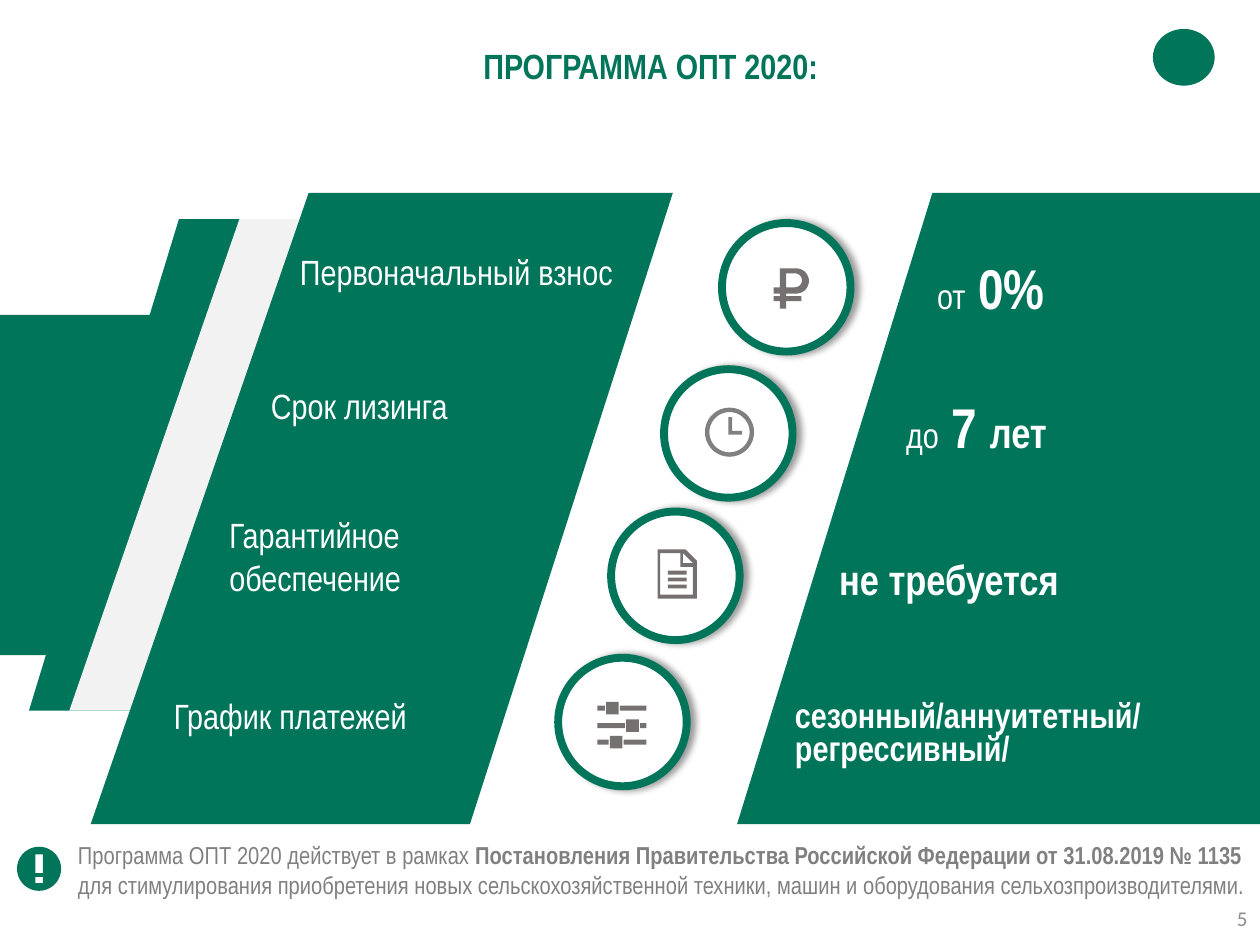
import math

import pptx
import pptx.dml.color
import pptx.enum.shapes
import pptx.enum.text
import pptx.oxml
import pptx.oxml.ns
import pptx.util

Inches = pptx.util.Inches
Pt = pptx.util.Pt
RGBColor = pptx.dml.color.RGBColor
OVAL = pptx.enum.shapes.MSO_SHAPE.OVAL
ALIGN = pptx.enum.text.PP_ALIGN
ANCHOR = pptx.enum.text.MSO_ANCHOR

GREEN = RGBColor(0x00, 0x75, 0x5A)
WHITE = RGBColor(0xFF, 0xFF, 0xFF)
PALE = RGBColor(0xF2, 0xF2, 0xF2)
GREY = RGBColor(0x80, 0x80, 0x80)
ICON_GREY = RGBColor(0x76, 0x71, 0x71)
NUMBER_GREY = RGBColor(0x8C, 0x8C, 0x8C)
FONT = "Arial Narrow"

deck = pptx.Presentation()
deck.slide_width = Inches(10)
deck.slide_height = Inches(7.5)
page = deck.slides.add_slide(deck.slide_layouts[5])


def arc(x, y, radius, start=0, stop=360):
    """Points along an arc, in degrees clockwise from the right."""
    angles = [math.radians(angle) for angle in range(start, stop + 1, 10)]
    return [(x + radius * math.cos(a), y + radius * math.sin(a)) for a in angles]


def draw_outline(contours, color):
    """One filled freeform; inner contours become holes."""
    builder = None
    for contour in contours:
        points = [(Inches(x), Inches(y)) for x, y in contour]
        if builder is None:
            builder = page.shapes.build_freeform(*points[0])
        else:
            builder.move_to(*points[0])
        builder.add_line_segments(points[1:], close=True)
    shape = builder.convert_to_shape()
    shape.shadow.inherit = False
    shape.fill.solid()
    shape.fill.fore_color.rgb = color
    shape.line.fill.background()


# Title
title = page.shapes.title
title.left, title.top = Inches(2.25), Inches(0.3)
title.width, title.height = Inches(5.83), Inches(0.44)
title.text_frame.text = "ПРОГРАММА ОПТ 2020:"
title.text_frame.vertical_anchor = ANCHOR.TOP
title.text_frame.word_wrap = True
para = title.text_frame.paragraphs[0]
para.alignment = ALIGN.CENTER
span = para.runs[0]
span.font.name, span.font.size, span.font.bold = FONT, Pt(20), True
span.font.color.rgb = GREEN

# Plain emblem in the corner
emblem = page.shapes.add_shape(OVAL, Inches(9.15), Inches(0.23), Inches(0.49), Inches(0.45))
emblem.shadow.inherit = False
emblem.fill.solid()
emblem.fill.fore_color.rgb = GREEN
emblem.line.fill.background()

# Slanted bands: top edge, its left and right, bottom edge, its left and right
bands = [
    (2.5, 0, 1.82, 5.2, 0, 0.99, GREEN),
    (1.74, 1.42, 3.41, 5.64, 0.23, 2.3, GREEN),
    (1.74, 1.9, 4.16, 5.64, 0.55, 2.9, PALE),
    (1.53, 2.45, 5.34, 6.54, 0.72, 3.73, GREEN),
    (1.53, 7.4, 10, 6.54, 5.85, 10, GREEN),
]
for top, top_left, top_right, bottom, bottom_left, bottom_right, color in bands:
    draw_outline([[(top_left, top), (top_right, top),
                   (bottom_right, bottom), (bottom_left, bottom)]], color)

# Ringed circles with a soft shadow to the right
for left, top in [(5.73, 1.77), (5.27, 2.93), (4.85, 4.06), (4.43, 5.22)]:
    circle = page.shapes.add_shape(OVAL, Inches(left), Inches(top), Inches(1.02), Inches(1.02))
    circle.fill.solid()
    circle.fill.fore_color.rgb = WHITE
    circle.line.color.rgb = GREEN
    circle.line.width = Pt(4.5)
    circle.shadow.inherit = False
    effects = circle._element.spPr.find(pptx.oxml.ns.qn("a:effectLst"))
    effects.append(pptx.oxml.parse_xml(
        f'<a:outerShdw {pptx.oxml.ns.nsdecls("a")} blurRad="{Pt(4)}" dist="{Pt(3)}" dir="0">'
        '<a:srgbClr val="000000"><a:alpha val="40000"/></a:srgbClr></a:outerShdw>'))

# Rouble icon
draw_outline([
    [(6.19, 2.13), *arc(6.32, 2.23, 0.1, -90, 90), (6.24, 2.33), (6.24, 2.35),
     (6.36, 2.35), (6.36, 2.39), (6.24, 2.39), (6.24, 2.45), (6.19, 2.45),
     (6.19, 2.39), (6.14, 2.39), (6.14, 2.35), (6.19, 2.35), (6.19, 2.33),
     (6.14, 2.33), (6.14, 2.28), (6.19, 2.28)],
    [(6.24, 2.17), *arc(6.31, 2.225, 0.055, -90, 90), (6.24, 2.28)],
], ICON_GREY)

# Clock icon
draw_outline([
    arc(5.79, 3.43, 0.195), arc(5.79, 3.43, 0.16),
    [(5.78, 3.31), (5.81, 3.31), (5.81, 3.42), (5.89, 3.42), (5.89, 3.45), (5.78, 3.45)],
], GREY)

# Document icon
text_lines = [[(5.3, y), (5.45, y), (5.45, y + 0.03), (5.3, y + 0.03)]
              for y in (4.53, 4.585, 4.64)]
draw_outline([
    [(5.22, 4.36), (5.44, 4.36), (5.53, 4.45), (5.53, 4.75), (5.22, 4.75)],
    [(5.24, 4.39), (5.4, 4.39), (5.4, 4.5), (5.5, 4.5), (5.5, 4.72), (5.24, 4.72)],
    [(5.42, 4.39), (5.5, 4.47), (5.42, 4.47)],
    *text_lines,
], ICON_GREY)

# Sliders icon: a knob with a rail on each side
sliders = []
for rail, knob in [(5.6, 4.81), (5.74, 4.97), (5.87, 4.84)]:
    for left, right, top, bottom in [(4.74, knob - 0.01, rail, rail + 0.04),
                                     (knob, knob + 0.1, rail - 0.03, rail + 0.07),
                                     (knob + 0.11, 5.13, rail, rail + 0.04)]:
        sliders.append([(left, top), (right, top), (right, bottom), (left, bottom)])
draw_outline(sliders, ICON_GREY)

# Exclamation icon
draw_outline([
    arc(0.31, 6.895, 0.175),
    [(0.28, 6.78), (0.34, 6.78), (0.34, 6.93), (0.28, 6.93)],
    [(0.28, 6.96), (0.34, 6.96), (0.34, 7.01), (0.28, 7.01)],
], GREEN)

# Condition names, top to bottom
labels = [
    (1.9, 1.94, 3.35, 0.44, "Первоначальный взнос"),
    (1.67, 3, 2.71, 0.44, "Срок лизинга"),
    (1.34, 4.03, 3.73, 1.11, "Гарантийное\nобеспечение"),
    (0.9, 5.46, 3.73, 1.11, "График платежей"),
]
for left, top, width, height, text in labels:
    box = page.shapes.add_textbox(Inches(left), Inches(top), Inches(width), Inches(height))
    box.text_frame.word_wrap = True
    box.text_frame.margin_left = Inches(0.48)
    box.text_frame.text = text
    for para in box.text_frame.paragraphs:
        span = para.runs[0]
        span.font.name, span.font.size = FONT, Pt(20)
        span.font.color.rgb = WHITE

# Condition values: paragraphs of (text, size, bold)
values = [
    (7.42, 2.01, 0.89, 0.54, [[("от", 20, False), (" 0%", 32, True)]]),
    (7.17, 3.11, 1.16, 0.54, [[("до", 20, False), (" 7 ", 32, True), ("лет", 24, True)]]),
    (6.64, 4.39, 1.78, 0.4, [[("не требуется", 24, True)]]),
    (6.31, 5.57, 2.83, 0.53, [[("сезонный/аннуитетный/", 20, True)],
                              [("регрессивный/", 20, True)]]),
]
for left, top, width, height, paragraphs in values:
    box = page.shapes.add_textbox(Inches(left), Inches(top), Inches(width), Inches(height))
    frame = box.text_frame
    frame.word_wrap = False
    frame.vertical_anchor = ANCHOR.MIDDLE
    frame.margin_left = frame.margin_right = frame.margin_top = frame.margin_bottom = 0
    for index, spans in enumerate(paragraphs):
        para = frame.add_paragraph() if index else frame.paragraphs[0]
        if len(paragraphs) > 1:
            para.alignment, para.line_spacing = ALIGN.LEFT, Pt(19)
        else:
            para.alignment = ALIGN.CENTER
        for text, size, bold in spans:
            span = para.add_run()
            span.text = text
            span.font.name, span.font.size, span.font.bold = FONT, Pt(size), bold
            span.font.color.rgb = WHITE

# Footnote
box = page.shapes.add_textbox(Inches(0.52), Inches(6.62), Inches(9.57), Inches(0.57))
box.text_frame.word_wrap = True
for text, bold in [
    ("Программа ОПТ 2020 действует в рамках ", False),
    ("Постановления Правительства Российской Федерации от 31.08.2019 № 1135 ", True),
    ("для стимулирования приобретения новых сельскохозяйственной техники, "
     "машин и оборудования сельхозпроизводителями.", False),
]:
    span = box.text_frame.paragraphs[0].add_run()
    span.text = text
    span.font.name, span.font.size, span.font.bold = FONT, Pt(14), bold
    span.font.color.rgb = GREY

# Page number
box = page.shapes.add_textbox(Inches(7.75), Inches(7.09), Inches(2.25), Inches(0.4))
box.text_frame.word_wrap = True
box.text_frame.vertical_anchor = ANCHOR.MIDDLE
box.text_frame.text = "5"
para = box.text_frame.paragraphs[0]
para.alignment = ALIGN.RIGHT
para.runs[0].font.name, para.runs[0].font.size = "Calibri", Pt(12)
para.runs[0].font.color.rgb = NUMBER_GREY

deck.save("out.pptx")
